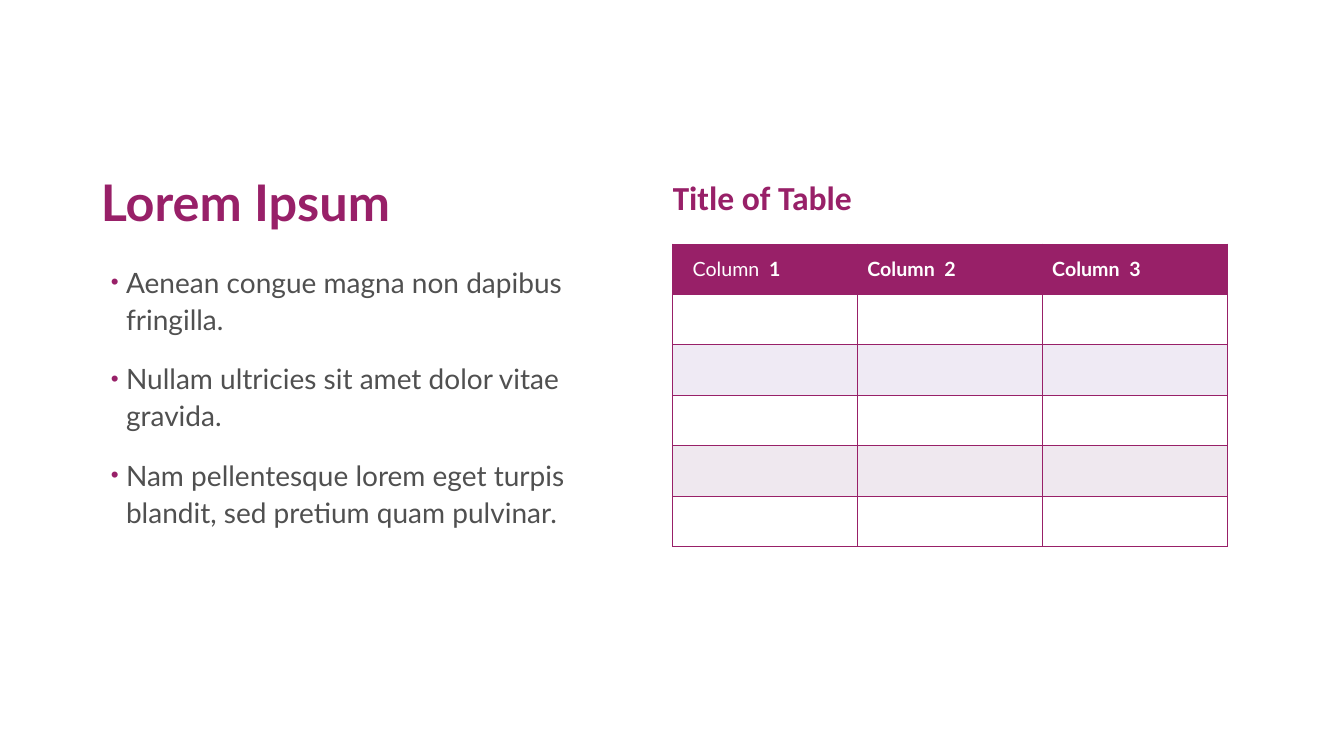
from dataclasses import dataclass

from lxml.etree import SubElement
from pptx import Presentation
from pptx.dml.color import RGBColor
from pptx.enum.text import MSO_ANCHOR, PP_ALIGN
from pptx.oxml import parse_xml
from pptx.oxml.ns import nsdecls, qn
from pptx.util import Inches, Pt


@dataclass(frozen=True)
class Theme:
    font: str = "Lato"
    caption_font: str = "Calibri"
    accent: str = "982068"
    body: str = "505050"
    white: str = "FFFFFF"
    violet: str = "663399"
    plum: str = "642265"
    title_size: int = 36
    caption_size: int = 24
    body_size: int = 20
    header_size: int = 14


THEME = Theme()
BULLETS = [
    "Aenean congue magna non dapibus fringilla.",
    "Nullam ultricies sit amet dolor vitae gravida.",
    "Nam pellentesque lorem eget turpis blandit, sed pretium quam pulvinar.",
]
HEADERS = [
    [("Column", False), ("  1", True)],
    [("Column  2", True)],
    [("Column  3", True)],
]
# Fill colour and opacity in percent for each body row
ROW_FILLS = [
    (THEME.white, 100),
    (THEME.violet, 10),
    (THEME.white, 100),
    (THEME.plum, 10),
    (THEME.white, 20),
]


def add_text(p, text, *, size, color, font=THEME.font, bold=False):
    r = p.add_run()
    r.text = text
    r.font.name = font
    r.font.size = Pt(size)
    r.font.bold = bold
    r.font.color.rgb = RGBColor.from_string(color)


def set_margins(box, left=0, top=0, right=0, bottom=0):
    box.margin_left, box.margin_top = Inches(left), Inches(top)
    box.margin_right, box.margin_bottom = Inches(right), Inches(bottom)


def add_title(s, text):
    title = s.shapes.title
    title.left, title.top = Inches(1), Inches(1)
    title.width, title.height = Inches(5.32), Inches(1.3)
    tf = title.text_frame
    set_margins(tf)
    tf.word_wrap = True
    tf.vertical_anchor = MSO_ANCHOR.BOTTOM
    p = tf.paragraphs[0]
    p.alignment = PP_ALIGN.LEFT
    add_text(p, text, size=THEME.title_size, color=THEME.accent, bold=True)


def set_bullet(p):
    pPr = p._p.get_or_add_pPr()
    pPr.set("marL", str(Inches(0.25)))
    pPr.set("indent", str(Inches(-0.15)))
    SubElement(SubElement(pPr, qn("a:buClr")), qn("a:srgbClr")).set("val", THEME.accent)
    SubElement(pPr, qn("a:buSzPct")).set("val", "80000")
    SubElement(pPr, qn("a:buFont")).set("typeface", "Arial")
    SubElement(pPr, qn("a:buChar")).set("char", "•")


def add_bullets(s, items):
    tf = s.shapes.add_textbox(Inches(1), Inches(2.6), Inches(5.32), Inches(3.25)).text_frame
    tf.word_wrap = True
    set_margins(tf)
    for i, item in enumerate(items):
        p = tf.add_paragraph() if i else tf.paragraphs[0]
        set_bullet(p)
        p.line_spacing = 1.1
        p.space_before = Pt(10 if i else 0)
        p.space_after = Pt(6)
        add_text(p, item, size=THEME.body_size, color=THEME.body)


def fill_cell(cell, color, opacity=100):
    cell.fill.solid()
    cell.fill.fore_color.rgb = RGBColor.from_string(color)
    if opacity < 100:
        clr = cell._tc.tcPr.find(".//" + qn("a:srgbClr"))
        SubElement(clr, qn("a:alpha")).set("val", str(opacity * 1000))


def set_borders(cell, caption=False):
    """Draw accent borders; a caption cell keeps only its bottom one visible."""
    for i, side in enumerate("LRTB"):
        hidden = caption and side != "B"
        color, width = (THEME.white, 1) if hidden else (THEME.accent, 0.5)
        cell._tc.get_or_add_tcPr().insert(i, parse_xml(
            f'<a:ln{side} {nsdecls("a")} w="{Pt(width)}"><a:solidFill>'
            f'<a:srgbClr val="{color}"/></a:solidFill></a:ln{side}>'))


def add_table(s):
    n_rows, n_cols = len(ROW_FILLS) + 2, len(HEADERS)
    frame = s.shapes.add_table(n_rows, n_cols, Inches(6.67), Inches(1.77),
                               Inches(5.5), Inches(3.65))
    table = frame.table
    table.first_row = table.horz_banding = False
    for row in table.rows:
        row.height = Inches(0.5)
    table.rows[0].height = Inches(0.65)

    fills = [(THEME.white, 100), (THEME.accent, 100), *ROW_FILLS]
    for i, fill in enumerate(fills):
        for j in range(n_cols):
            fill_cell(table.cell(i, j), *fill)
            set_borders(table.cell(i, j), caption=i == 0)

    caption = table.cell(0, 0)
    caption.merge(table.cell(0, n_cols - 1))
    set_margins(caption)
    add_text(caption.text_frame.paragraphs[0], "Title of Table", size=THEME.caption_size,
             color=THEME.accent, font=THEME.caption_font, bold=True)

    for j, parts in enumerate(HEADERS):
        cell = table.cell(1, j)
        cell.vertical_anchor = MSO_ANCHOR.MIDDLE
        if j == 0:
            set_margins(cell, 0.2, 0.05, 0.05, 0.05)
        for text, bold in parts:
            add_text(cell.text_frame.paragraphs[0], text, size=THEME.header_size,
                     color=THEME.white, bold=bold)


def main():
    prs = Presentation()
    prs.slide_width, prs.slide_height = Inches(13.33), Inches(7.5)
    s = prs.slides.add_slide(prs.slide_layouts[5])
    add_title(s, "Lorem Ipsum")
    add_bullets(s, BULLETS)
    add_table(s)
    prs.save("out.pptx")


if __name__ == "__main__":
    main()
